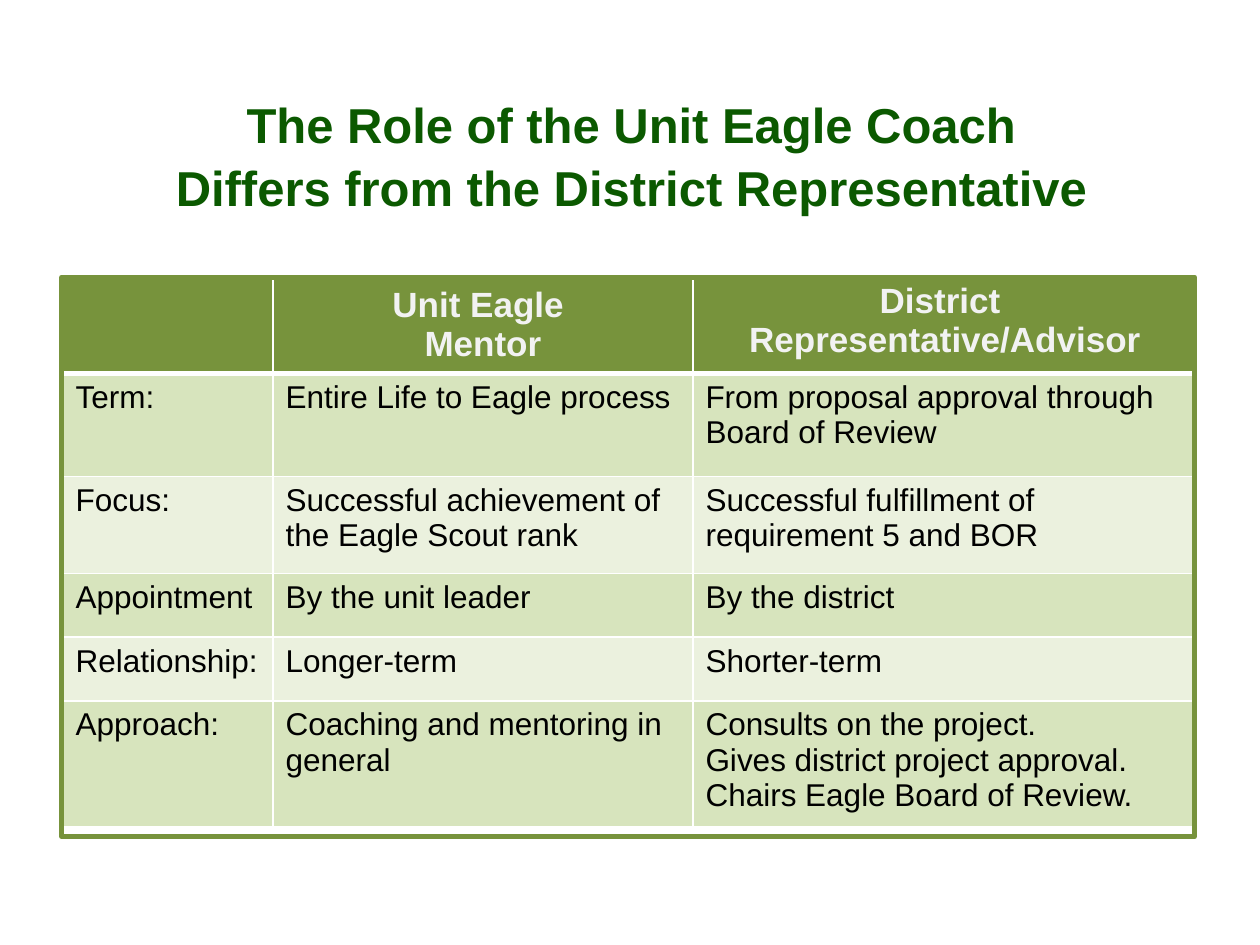
from lxml import etree
from pptx import Presentation
from pptx.dml.color import RGBColor
from pptx.enum import shapes, text
from pptx.oxml import ns
from pptx.util import Pt

TITLE = "The Role of the Unit Eagle Coach\vDiffers from the District Representative"
# Line breaks separate the paragraphs of a cell.
HEADER = ["", "Unit Eagle \nMentor", "District \nRepresentative/Advisor"]
ROLES = [
    ["Term:", "Entire Life to Eagle process", "From proposal approval through Board of Review"],
    ["Focus:", "Successful achievement of the Eagle Scout rank",
     "Successful fulfillment of requirement 5 and BOR"],
    ["Appointment", "By the unit leader", "By the district"],
    ["Relationship:", "Longer-term", "Shorter-term"],
    ["Approach:", "Coaching and mentoring in general",
     "Consults on the project.\nGives district project approval.\nChairs Eagle Board of Review."],
]
COLUMN_WIDTHS = [120, 240, 288]
ROW_HEIGHTS = [55.7, 59, 55.5, 36.3, 36.5, 59]
TITLE_BOX = (21.6, 17.3, 678.2, 140.4)
TABLE_ORIGIN = (36, 157.7)
FRAME_BOX = (35.3, 158.4, 647.3, 319.7)

THEME = {
    "font": "Arial", "title_size": 28, "header_size": 20, "body_size": 18,
    "title": "0B5900", "header_text": "F2F2F2", "body_text": "000000",
    "green": "77933C", "bands": ["D7E4BD", "EBF1DE"], "border": "FFFFFF",
    "thin": 1, "thick": 3,
}


def color(name):
    return RGBColor.from_string(THEME.get(name, name))


def style(para, size, tint, bold=False, align=text.PP_ALIGN.LEFT):
    para.alignment = align
    para.font.name = THEME["font"]
    para.font.size = Pt(THEME[size])
    para.font.bold = bold
    para.font.color.rgb = color(tint)


def add_borders(cell, top, bottom):
    """Draw all four cell edges; call before filling, as fill follows edges in the XML."""
    properties = cell._tc.get_or_add_tcPr()
    widths = {"lnL": THEME["thin"], "lnR": THEME["thin"], "lnT": top, "lnB": bottom}
    for edge, width in widths.items():
        line = etree.SubElement(properties, ns.qn(f"a:{edge}"), w=str(Pt(width)))
        fill = etree.SubElement(line, ns.qn("a:solidFill"))
        etree.SubElement(fill, ns.qn("a:srgbClr"), val=THEME["border"])


def add_title(page):
    box = page.shapes.add_textbox(*map(Pt, TITLE_BOX))
    frame = box.text_frame
    frame.word_wrap = True
    frame.vertical_anchor = text.MSO_ANCHOR.MIDDLE
    frame.text = TITLE
    para = frame.paragraphs[0]
    style(para, "title_size", "title", True, text.PP_ALIGN.CENTER)
    para.line_spacing = 1.08


def add_roles_table(page):
    rows = [HEADER] + ROLES
    size = (sum(COLUMN_WIDTHS), sum(ROW_HEIGHTS))
    table = page.shapes.add_table(len(rows), len(HEADER), *map(Pt, TABLE_ORIGIN + size)).table
    table.horz_banding = False
    for column, width in zip(table.columns, COLUMN_WIDTHS):
        column.width = Pt(width)
    for r, (row, height) in enumerate(zip(rows, ROW_HEIGHTS)):
        table.rows[r].height = Pt(height)
        is_header = r == 0
        top = THEME["thick"] if r == 1 else THEME["thin"]
        bottom = THEME["thick"] if is_header else THEME["thin"]
        for c, wording in enumerate(row):
            cell = table.cell(r, c)
            add_borders(cell, top, bottom)
            cell.fill.solid()
            cell.fill.fore_color.rgb = color("green" if is_header else THEME["bands"][(r - 1) % 2])
            cell.text = wording
            for para in cell.text_frame.paragraphs:
                if is_header:
                    style(para, "header_size", "header_text", True, text.PP_ALIGN.CENTER)
                else:
                    style(para, "body_size", "body_text")
    table.cell(0, 1).vertical_anchor = text.MSO_ANCHOR.MIDDLE


def add_frame(page):
    frame = page.shapes.add_shape(shapes.MSO_SHAPE.RECTANGLE, *map(Pt, FRAME_BOX))
    frame.shadow.inherit = False
    frame.fill.background()
    frame.line.color.rgb = color("green")
    frame.line.width = Pt(THEME["thick"])


def main():
    deck = Presentation()
    deck.slide_width, deck.slide_height = Pt(720), Pt(540)
    page = deck.slides.add_slide(deck.slide_layouts[6])
    add_title(page)
    add_roles_table(page)
    add_frame(page)
    deck.save("out.pptx")


if __name__ == "__main__":
    main()
